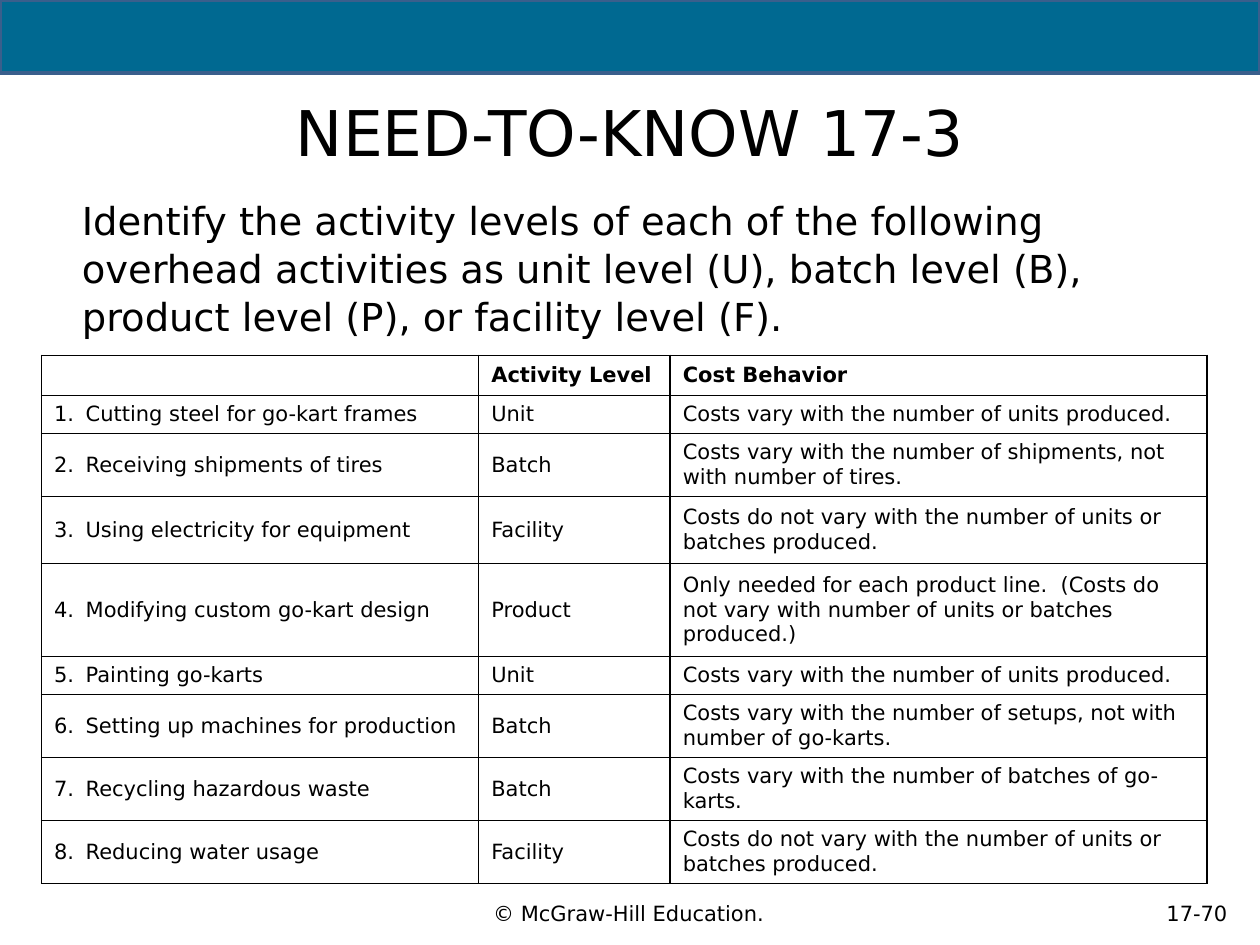
from lxml.etree import SubElement
from pptx import Presentation
from pptx.dml.color import RGBColor
from pptx.enum.shapes import MSO_SHAPE
from pptx.enum.text import MSO_ANCHOR, MSO_AUTO_SIZE, PP_ALIGN
from pptx.oxml.ns import qn
from pptx.util import Inches, Pt

FONT = "DejaVu Sans"
COLORS = {"band": "006991", "band_line": "3A5F8C", "text": "000000", "border": "000000"}

COL_WIDTHS = [3.47, 1.52, 4.26]
ROW_HEIGHTS = [0.32, 0.29, 0.49, 0.53, 0.74, 0.29, 0.49, 0.49, 0.5]
HEADER = ("", "Activity Level", "Cost Behavior")
ACTIVITIES = [
    ("Cutting steel for go-kart frames", "Unit",
     "Costs vary with the number of units produced."),
    ("Receiving shipments of tires", "Batch",
     "Costs vary with the number of shipments, not with number of tires."),
    ("Using electricity for equipment", "Facility",
     "Costs do not vary with the number of units or batches produced."),
    ("Modifying custom go-kart design", "Product",
     "Only needed for each product line.  (Costs do not vary with number of units "
     "or batches produced.)"),
    ("Painting go-karts", "Unit",
     "Costs vary with the number of units produced."),
    ("Setting up machines for production", "Batch",
     "Costs vary with the number of setups, not with number of go-karts."),
    ("Recycling hazardous waste", "Batch",
     "Costs vary with the number of batches of go-karts."),
    ("Reducing water usage", "Facility",
     "Costs do not vary with the number of units or batches produced."),
]


def rgb(name):
    return RGBColor.from_string(COLORS[name])


def place(sp, left, top, width, height):
    sp.left, sp.top = Inches(left), Inches(top)
    sp.width, sp.height = Inches(width), Inches(height)


def set_text(tf, text, size, align=PP_ALIGN.LEFT, bold=False):
    tf.text = text
    p = tf.paragraphs[0]
    p.alignment = align
    for r in p.runs:
        r.font.name = FONT
        r.font.size = Pt(size)
        r.font.bold = bold
        r.font.color.rgb = rgb("text")
    return p


def set_indent(p, left, first):
    pPr = p._p.get_or_add_pPr()
    pPr.set("marL", str(Inches(left)))
    pPr.set("indent", str(Inches(first)))
    return pPr


def add_band(s):
    sp = s.shapes.add_shape(MSO_SHAPE.RECTANGLE, 0, 0, Inches(10), Inches(0.58))
    sp.shadow.inherit = False
    sp.fill.solid()
    sp.fill.fore_color.rgb = rgb("band")
    sp.line.color.rgb = rgb("band_line")
    sp.line.width = Pt(2)


def add_footer(s, text, left, width):
    sp = s.shapes.add_textbox(Inches(left), Inches(7), Inches(width), Inches(0.5))
    tf = sp.text_frame
    tf.word_wrap = True
    tf.vertical_anchor = MSO_ANCHOR.MIDDLE
    set_text(tf, text, 12, PP_ALIGN.CENTER)


def fill_placeholders(s):
    title, body = s.placeholders
    place(title, 0, 0.58, 10, 0.92)
    title.text_frame.vertical_anchor = MSO_ANCHOR.MIDDLE
    set_text(title.text_frame, "NEED-TO-KNOW 17-3", 36, PP_ALIGN.CENTER)

    place(body, 0.55, 1.5, 8.87, 1.25)
    p = set_text(body.text_frame,
                 "Identify the activity levels of each of the following overhead "
                 "activities as unit level (U), batch level (B), product level (P), "
                 "or facility level (F).", 22)
    SubElement(set_indent(p, 0, 0), qn("a:buNone"))
    p.space_before = Pt(0)
    p.line_spacing = 1.04
    for sp in (title, body):
        sp.text_frame.auto_size = MSO_AUTO_SIZE.NONE


def set_borders(cell):
    tcPr = cell._tc.get_or_add_tcPr()
    for side in ("a:lnL", "a:lnR", "a:lnT", "a:lnB"):
        ln = SubElement(tcPr, qn(side), w=str(Pt(1)))
        SubElement(SubElement(ln, qn("a:solidFill")), qn("a:srgbClr"), val=COLORS["border"])


def fill_cell(cell, text, row, col):
    """Write one cell; activities in the first column are numbered."""
    cell.vertical_anchor = MSO_ANCHOR.MIDDLE
    p = set_text(cell.text_frame, text, 12, bold=row == 0)
    if not text:
        SubElement(p._p, qn("a:endParaRPr"), sz="1200")
    elif row and col == 0:
        SubElement(set_indent(p, 0.25, -0.25), qn("a:buAutoNum"),
                   type="arabicPeriod", startAt=str(row))
    set_borders(cell)
    cell.fill.background()


def add_activity_table(s):
    rows = [HEADER] + ACTIVITIES
    table = s.shapes.add_table(len(rows), len(HEADER), Inches(0.33), Inches(2.82),
                               Inches(sum(COL_WIDTHS)), Inches(sum(ROW_HEIGHTS))).table
    table.horz_banding = False
    for column, width in zip(table.columns, COL_WIDTHS):
        column.width = Inches(width)
    for i, (height, texts) in enumerate(zip(ROW_HEIGHTS, rows)):
        table.rows[i].height = Inches(height)
        for j, text in enumerate(texts):
            fill_cell(table.cell(i, j), text, i, j)


def main():
    prs = Presentation()
    prs.slide_width, prs.slide_height = Inches(10), Inches(7.5)
    s = prs.slides.add_slide(prs.slide_layouts[1])
    add_band(s)
    add_footer(s, "17-70", 9, 1)
    add_footer(s, "© McGraw-Hill Education.", 0.94, 8.1)
    fill_placeholders(s)
    add_activity_table(s)
    prs.save("out.pptx")


if __name__ == "__main__":
    main()
